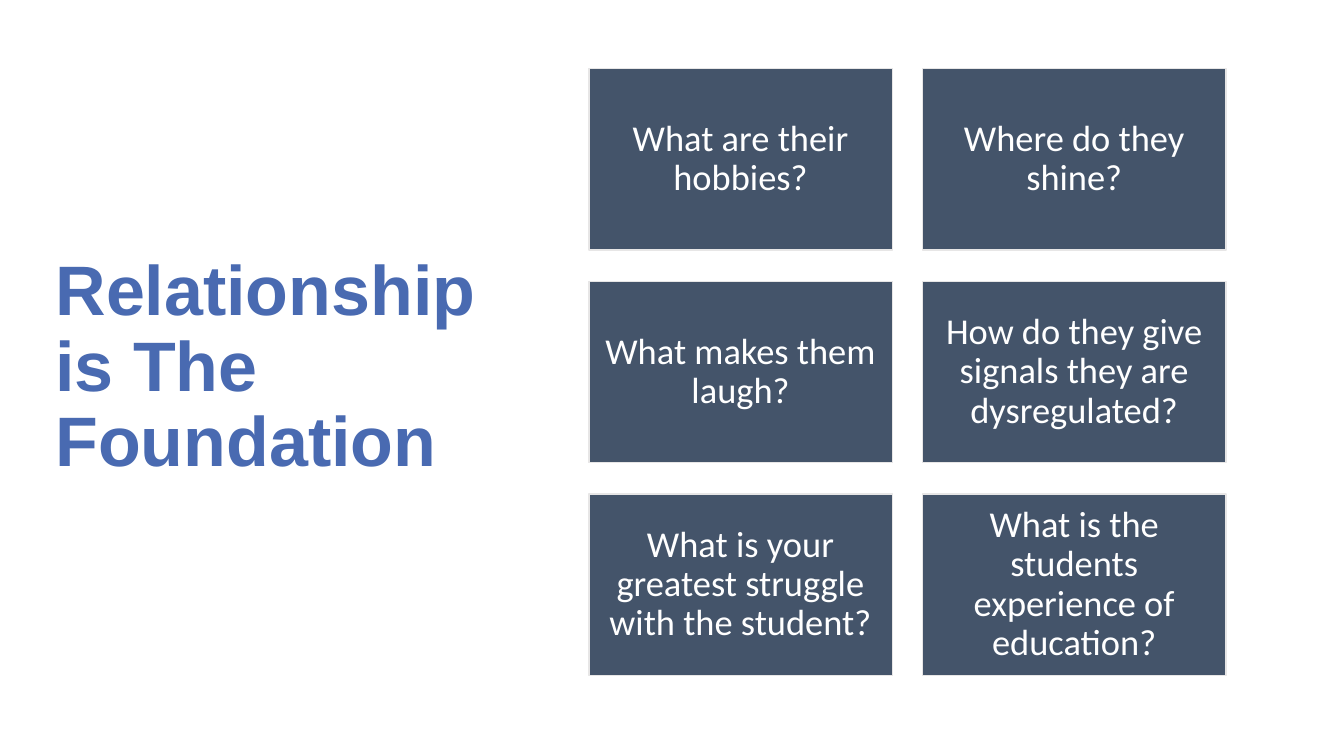
from dataclasses import dataclass

from pptx import Presentation
from pptx.dml.color import RGBColor
from pptx.enum.shapes import MSO_SHAPE
from pptx.enum.text import MSO_ANCHOR, MSO_AUTO_SIZE, PP_ALIGN
from pptx.slide import Slide
from pptx.util import Emu, Pt

RECTANGLE = MSO_SHAPE.RECTANGLE
MIDDLE = MSO_ANCHOR.MIDDLE
NO_FIT = MSO_AUTO_SIZE.NONE
LEFT, CENTER = PP_ALIGN.LEFT, PP_ALIGN.CENTER

COLORS = {
    "background": "FFFFFF",
    "title": "496AB1",
    "card": "44546A",
    "card_line": "E7E6E6",
    "card_text": "FFFFFF",
}
EMU_PER_PX = 9144
TITLE_ONLY_LAYOUT = 5
COLUMNS = 2
GRID_LEFT, GRID_TOP = 584, 68
CARD_WIDTH, CARD_HEIGHT = 301, 180
COLUMN_STEP, ROW_STEP = 331, 211
CARD_INSET = 11

QUESTIONS = [
    "What are their hobbies?",
    "Where do they shine?",
    "What makes them laugh?",
    "How do they give signals they are dysregulated?",
    "What is your greatest struggle with the student?",
    "What is the students experience of education?",
]


@dataclass(frozen=True)
class TextStyle:
    font: str
    size: int
    color: str
    bold: bool
    alignment: PP_ALIGN


@dataclass(frozen=True)
class Card:
    question: str
    left: int
    top: int


TITLE_STYLE = TextStyle("Arial", 50, "title", True, LEFT)
CARD_STYLE = TextStyle("Calibri", 26, "card_text", False, CENTER)


def px(length: int) -> Emu:
    return Emu(length * EMU_PER_PX)


def color(name: str) -> RGBColor:
    return RGBColor.from_string(COLORS[name])


def write_text(box, text: str, style: TextStyle) -> None:
    frame = box.text_frame
    frame.text = text
    frame.word_wrap = True
    frame.auto_size = NO_FIT
    frame.vertical_anchor = MIDDLE
    para = frame.paragraphs[0]
    para.alignment = style.alignment
    para.line_spacing = 0.9
    font = para.runs[0].font
    font.name = style.font
    font.size = Pt(style.size)
    font.bold = style.bold
    font.color.rgb = color(style.color)


def draw_title(page: Slide) -> None:
    title = page.shapes.title
    title.left, title.top = px(45), px(61)
    title.width, title.height = px(498), px(609)
    write_text(title, "Relationship is The Foundation", TITLE_STYLE)


def draw_card(page: Slide, card: Card) -> None:
    box = page.shapes.add_shape(
        RECTANGLE, px(card.left), px(card.top), px(CARD_WIDTH), px(CARD_HEIGHT)
    )
    box.shadow.inherit = False
    box.fill.solid()
    box.fill.fore_color.rgb = color("card")
    box.line.color.rgb = color("card_line")
    box.line.width = Pt(1)
    frame = box.text_frame
    frame.margin_left = frame.margin_right = px(CARD_INSET)
    frame.margin_top = frame.margin_bottom = px(CARD_INSET)
    write_text(box, card.question, CARD_STYLE)


def place_cards() -> list[Card]:
    cards = []
    for index, question in enumerate(QUESTIONS):
        row, column = divmod(index, COLUMNS)
        left = GRID_LEFT + column * COLUMN_STEP
        top = GRID_TOP + row * ROW_STEP
        cards.append(Card(question, left, top))
    return cards


def main() -> None:
    deck = Presentation()
    deck.slide_width, deck.slide_height = px(1333), px(750)
    page = deck.slides.add_slide(deck.slide_layouts[TITLE_ONLY_LAYOUT])
    page.background.fill.solid()
    page.background.fill.fore_color.rgb = color("background")
    draw_title(page)
    for card in place_cards():
        draw_card(page, card)
    deck.save("out.pptx")


if __name__ == "__main__":
    main()
